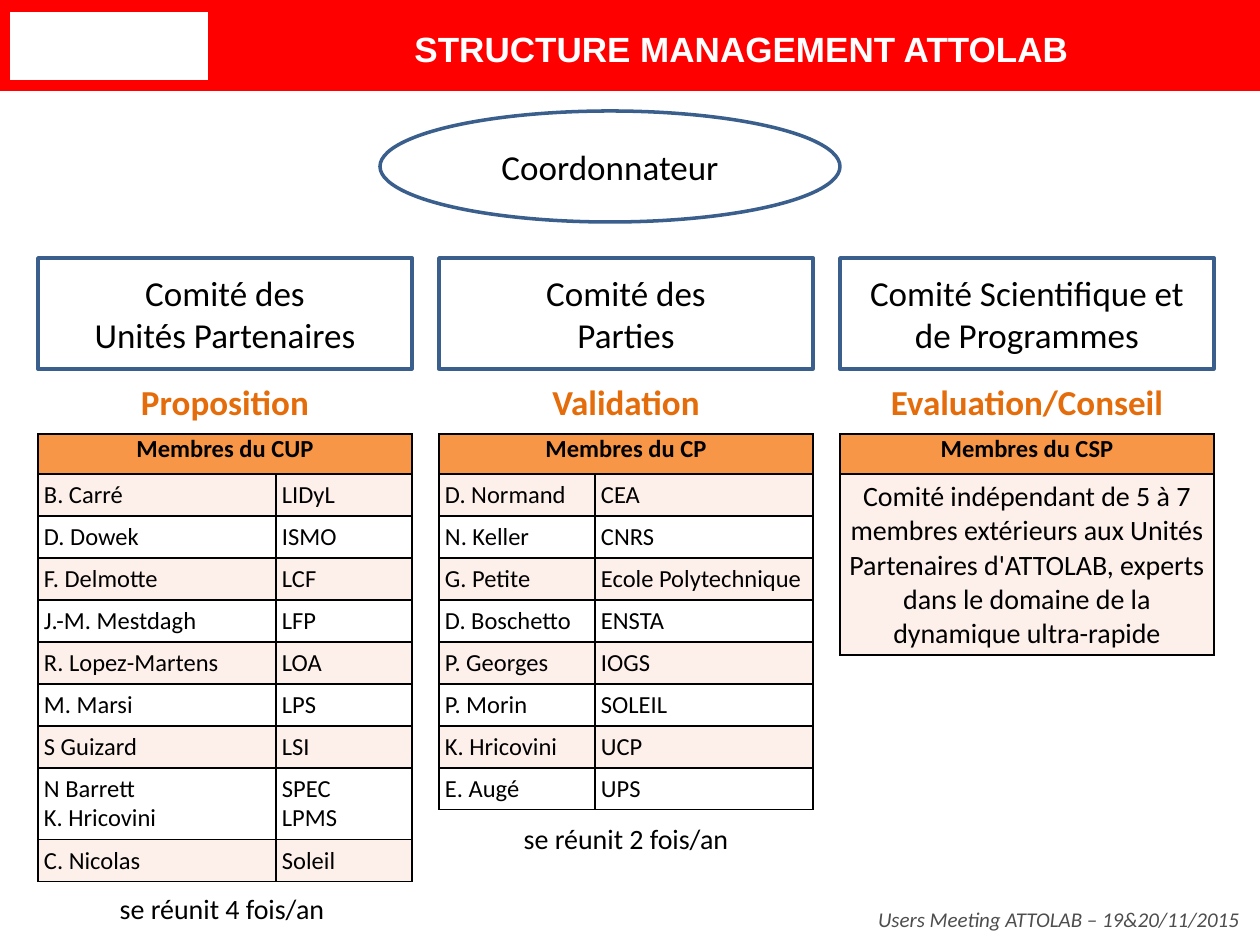
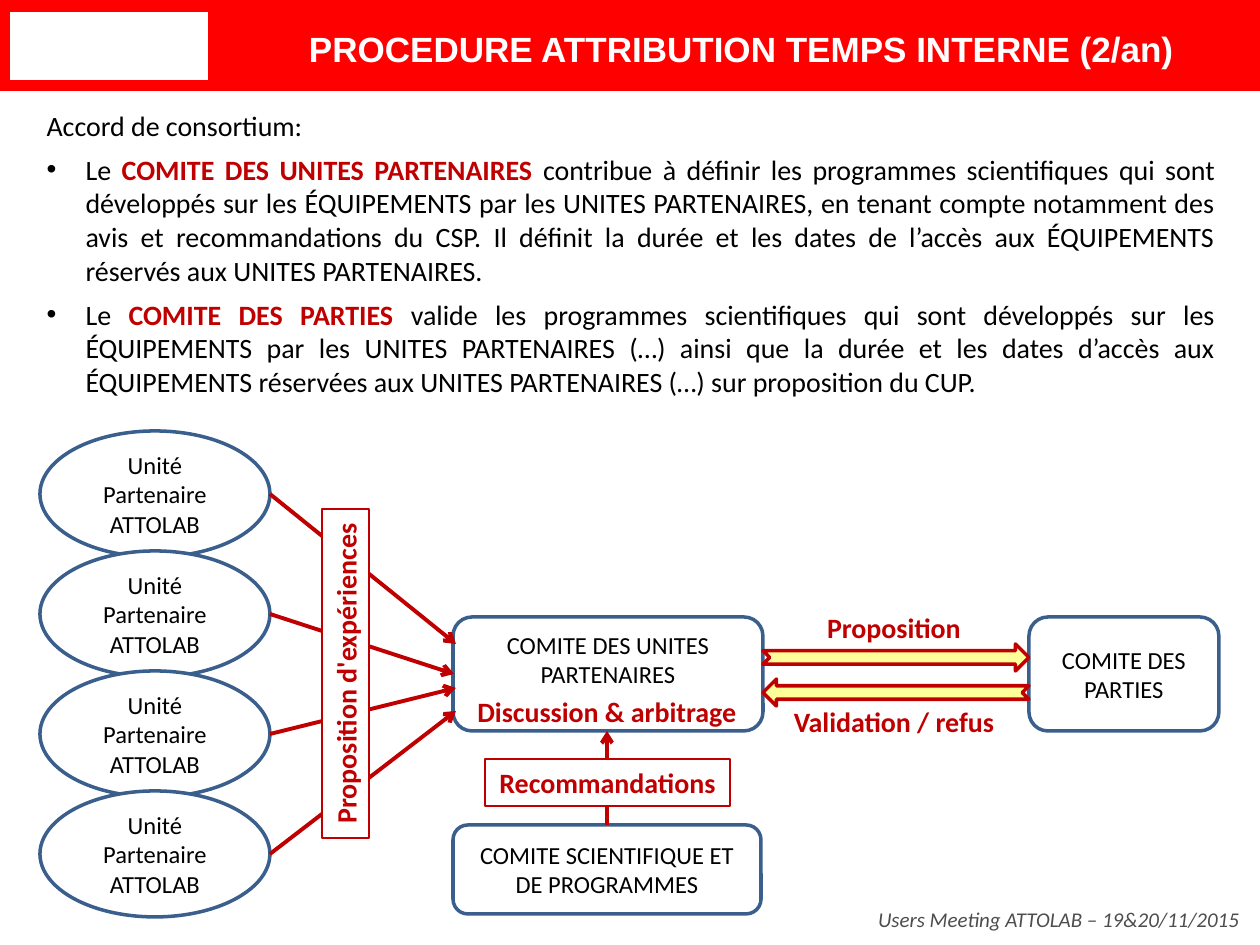
from lxml import etree
from pptx import Presentation
from pptx import util as u
from pptx.dml import color
from pptx.enum import shapes, text
from pptx.oxml import ns

PX = 7257
RED, BLUE, ORANGE, BLACK, WHITE = "C00000", "3A5F8C", "E46C0A", "000000", "FFFFFF"
KIND = shapes.MSO_SHAPE
ALIGN = text.PP_ALIGN
tint = color.RGBColor.from_string


def write(frame, content, size, ink=BLACK, align=ALIGN.CENTER, **extra):
    for n, line in enumerate(content.split("\n")):
        para = frame.paragraphs[0] if n == 0 else frame.add_paragraph()
        para.alignment = align
        for k, part in enumerate(line.split("|")):
            run = para.add_run()
            run.text = part
            look = {"size": u.Pt(size), "name": "Calibri", "bold": k % 2 == 1, **extra}
            for key, value in look.items():
                setattr(run.font, key, value)
            run.font.color.rgb = tint(RED if k % 2 else ink)


def box(slide, kind, place, content="", size=14, fill=WHITE, line=BLUE, width=2, **style):
    place = [n * PX for n in place]
    if kind is None:
        part = slide.shapes.add_textbox(*place)
    else:
        part = slide.shapes.add_shape(kind, *place)
        part.shadow.inherit = False
        part.fill.solid()
        part.fill.fore_color.rgb = tint(fill)
        if line:
            part.line.color.rgb = tint(line)
            part.line.width = u.Pt(width)
        else:
            part.line.fill.background()
        part.text_frame.vertical_anchor = text.MSO_ANCHOR.MIDDLE
    part.text_frame.word_wrap = True
    if content:
        write(part.text_frame, content, size, **style)
    return part


prs = Presentation()
prs.slide_width, prs.slide_height = 1260 * PX, 945 * PX

structure = prs.slides.add_slide(prs.slide_layouts[5])
procedure = prs.slides.add_slide(prs.slide_layouts[1])
headlines = [
    (structure, "STRUCTURE MANAGEMENT ATTOLAB"),
    (procedure, "PROCEDURE ATTRIBUTION TEMPS INTERNE (2/an)"),
]
for slide, headline in headlines:
    band = box(slide, KIND.RECTANGLE, (0, 0, 1260, 91), fill="FF0000", line=None)
    emblem = box(slide, KIND.RECTANGLE, (10, 12, 198, 68), line=None)
    for depth, part in enumerate((band, emblem)):
        slide.shapes._spTree.insert(2 + depth, part._element)
    box(slide, None, (845, 900, 407, 38), "Users Meeting ATTOLAB – 19&20/11/2015",
        12, ink="4D4D4D", align=ALIGN.RIGHT, italic=True)
    title = slide.shapes.title
    title.left, title.top, title.width, title.height = (n * PX for n in (224, 20, 1035, 56))
    title.text_frame.auto_size = text.MSO_AUTO_SIZE.NONE
    title.text_frame.vertical_anchor = text.MSO_ANCHOR.MIDDLE
    write(title.text_frame, headline, 20, WHITE, name="Arial", bold=True)

box(structure, KIND.OVAL, (380, 111, 460, 111), "Coordonnateur", 20)

committees = [
    ("Comité des\nUnités Partenaires", "Proposition", "Membres du CUP", (238, 136), [
        ("B. Carré", "LIDyL"), ("D. Dowek", "ISMO"), ("F. Delmotte", "LCF"),
        ("J.-M. Mestdagh", "LFP"), ("R. Lopez-Martens", "LOA"), ("M. Marsi", "LPS"),
        ("S Guizard", "LSI"), ("N Barrett\nK. Hricovini", "SPEC\nLPMS"),
        ("C. Nicolas", "Soleil")]),
    ("Comité des\nParties", "Validation", "Membres du CP", (156, 218), [
        ("D. Normand", "CEA"), ("N. Keller", "CNRS"), ("G. Petite", "Ecole Polytechnique"),
        ("D. Boschetto", "ENSTA"), ("P. Georges", "IOGS"), ("P. Morin", "SOLEIL"),
        ("K. Hricovini", "UCP"), ("E. Augé", "UPS")]),
    ("Comité Scientifique et de Programmes", "Evaluation/Conseil", "Membres du CSP", (374,), [
        ("Comité indépendant de 5 à 7 membres extérieurs aux Unités Partenaires d'ATTOLAB, "
         "experts dans le domaine de la dynamique ultra-rapide",)]),
]
for col, (committee, role, heading, widths, members) in enumerate(committees):
    left = 38 + 401 * col
    box(structure, KIND.RECTANGLE, (left, 258, 374, 111), committee, 20)
    box(structure, None, (left, 374, 374, 60), role, 20, ink=ORANGE, bold=True)

    heights = [40] + [72 if "\n" in row[0] else 42 for row in members]
    if len(widths) == 1:
        heights[1] = 181
    table = structure.shapes.add_table(
        len(heights), len(widths), left * PX, 434 * PX, 374 * PX, sum(heights) * PX).table
    for column, width in zip(table.columns, widths):
        column.width = width * PX
    for row, height in zip(table.rows, heights):
        row.height = height * PX
    if len(widths) > 1:
        table.cell(0, 0).merge(table.cell(0, 1))

    rows = [(heading,) + ("",) * (len(widths) - 1)] + members
    for r, row in enumerate(rows):
        for c, entry in enumerate(row):
            cell = table.cell(r, c)
            for side in ("left", "right", "top", "bottom"):
                setattr(cell, "margin_" + side, 6 * PX if r else 0)
                edge = etree.SubElement(
                    cell._tc.get_or_add_tcPr(), ns.qn("a:ln" + side[0].upper()), w="12700")
                paint = etree.SubElement(edge, ns.qn("a:solidFill"))
                etree.SubElement(paint, ns.qn("a:srgbClr"), val=BLACK)
            cell.fill.solid()
            cell.fill.fore_color.rgb = tint("F79646" if r == 0 else "FDEFE9" if r % 2 else WHITE)
            alone = len(widths) == 1
            if entry:
                write(cell.text_frame, entry, 16 if alone and r else 14, bold=r == 0,
                      align=ALIGN.CENTER if alone or r == 0 else ALIGN.LEFT)

for place, meeting in [((35, 885, 374, 60), "se réunit 4 fois/an"),
                       ((439, 815, 374, 60), "se réunit 2 fois/an")]:
    box(structure, None, place, meeting, 16)

agreement = procedure.placeholders[1]
agreement.left, agreement.top, agreement.width, agreement.height = (
    n * PX for n in (34, 102, 1194, 305))
agreement.text_frame.auto_size = text.MSO_AUTO_SIZE.NONE
write(agreement.text_frame,
      "Accord de consortium:\n"
      "Le |COMITE DES UNITES PARTENAIRES |contribue à définir les programmes scientifiques qui "
      "sont développés sur les ÉQUIPEMENTS par les UNITES PARTENAIRES, en tenant compte "
      "notamment des avis et recommandations du CSP. Il définit la durée et les dates de "
      "l’accès aux ÉQUIPEMENTS réservés aux UNITES PARTENAIRES.\n"
      "Le |COMITE DES PARTIES |valide les programmes scientifiques qui sont développés sur les "
      "ÉQUIPEMENTS par les UNITES PARTENAIRES (…) ainsi que la durée et les dates d’accès aux "
      "ÉQUIPEMENTS réservées aux UNITES PARTENAIRES (…) sur proposition du CUP.",
      16, align=ALIGN.JUSTIFY)
for n, para in enumerate(agreement.text_frame.paragraphs):
    para.space_before = u.Pt(6 if n else 0)
    props = para._p.get_or_add_pPr()
    props.set("marL", str(39 * PX if n else 0))
    props.set("indent", str(-39 * PX if n else 0))
    if n:
        etree.SubElement(props, ns.qn("a:buChar"), char="•")
    else:
        etree.SubElement(props, ns.qn("a:buNone"))

for n in range(4):
    box(procedure, KIND.OVAL, (40, 431 + 120 * n, 230, 126), "Unité Partenaire\nATTOLAB")
units = box(procedure, KIND.ROUNDED_RECTANGLE, (453, 617, 310, 114),
            "COMITE DES UNITES PARTENAIRES")
units.text_frame.margin_bottom = 36 * PX
box(procedure, KIND.ROUNDED_RECTANGLE, (1029, 617, 190, 114), "COMITE DES PARTIES")
box(procedure, KIND.ROUNDED_RECTANGLE, (453, 825, 308, 89), "COMITE SCIENTIFIQUE ET DE PROGRAMMES")

targets = [(456, 644), (454, 674), (456, 688), (456, 711)]
flows = [(270, 494 + 120 * n, *target) for n, target in enumerate(targets)]
for flow in flows + [(607, 825, 607, 731)]:
    link = procedure.shapes.add_connector(shapes.MSO_CONNECTOR.STRAIGHT, *(n * PX for n in flow))
    link.line.color.rgb = tint(RED)
    link.line.width = u.Pt(2.25)
    etree.SubElement(link.line._get_or_add_ln(), ns.qn("a:tailEnd"), type="arrow")
    etree.SubElement(link._element.spPr, ns.qn("a:effectLst"))

for top, turn in [(644, 0), (679, 180)]:
    exchange = box(procedure, KIND.NOTCHED_RIGHT_ARROW, (763, top, 266, 27),
                   fill="FFFF99", line=RED)
    exchange.rotation = turn

labels = [
    (KIND.RECTANGLE, (181, 650, 329, 47), "Proposition d'expériences", 270),
    (KIND.RECTANGLE, (485, 759, 245, 47), "Recommandations", 0),
    (None, (457, 688, 300, 47), "Discussion & arbitrage", 0),
    (None, (744, 604, 300, 47), "Proposition", 0),
    (None, (744, 698, 300, 47), "Validation / refus", 0),
]
for kind, place, label, turn in labels:
    part = box(procedure, kind, place, label, 16, line=RED, width=0.75, ink=RED, bold=True)
    part.rotation = turn
    part.text_frame.word_wrap = kind is None

prs.save("out.pptx")
